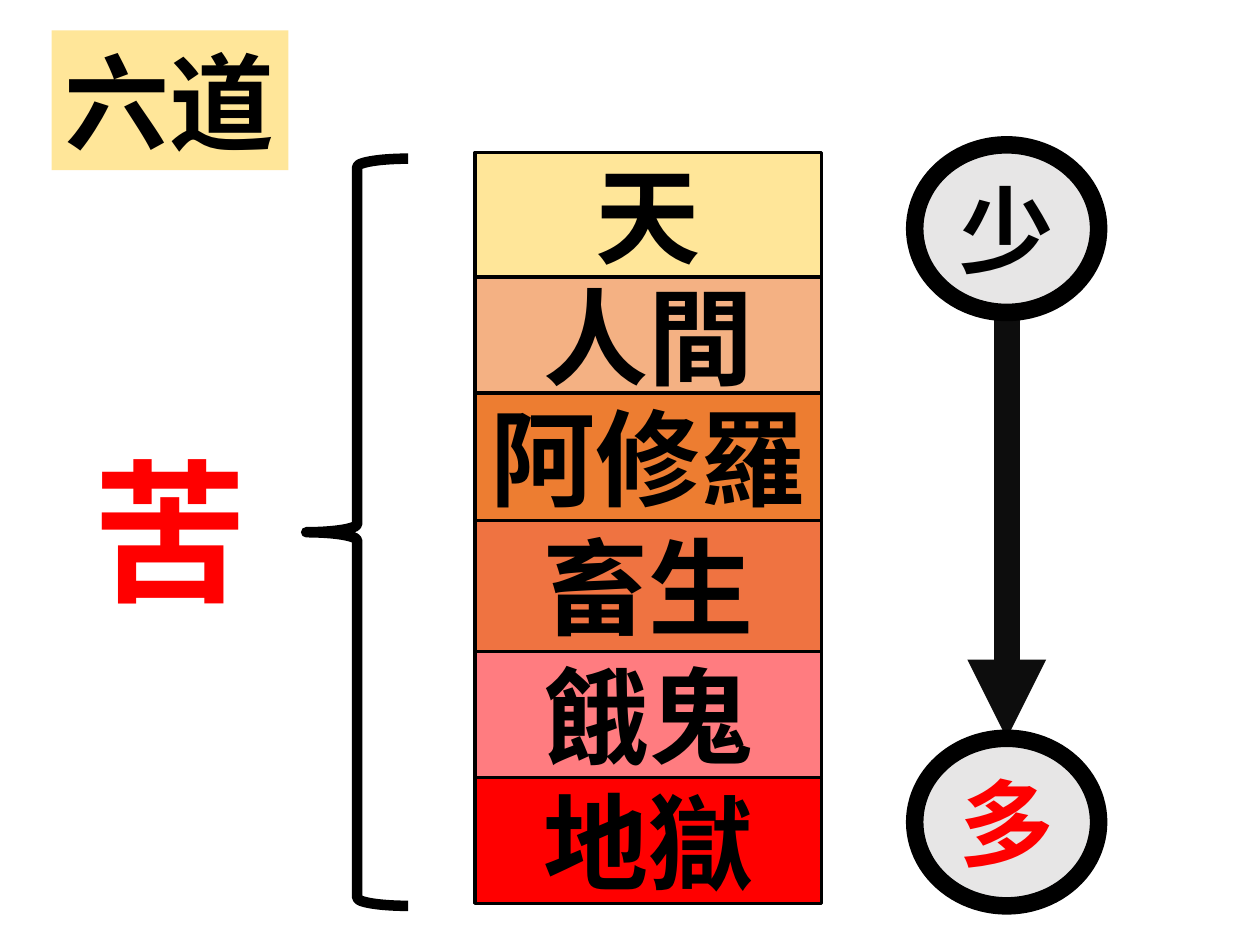
"""Draw the six realms, ranked from least to most suffering."""
from dataclasses import dataclass
from itertools import accumulate

from lxml.etree import SubElement
from pptx import Presentation
from pptx.dml.color import RGBColor
from pptx.enum.shapes import MSO_CONNECTOR, MSO_SHAPE
from pptx.enum.text import MSO_ANCHOR, MSO_AUTO_SIZE, PP_ALIGN
from pptx.oxml.ns import qn
from pptx.util import Inches, Pt

COLS, ROWS = 100, 75
WIDTH, HEIGHT = Inches(10), Inches(7.5)
FACE = "Noto Sans CJK JP"
BLACK, RED, CREAM, GREY = "000000", "FF0000", "FFE699", "E7E6E6"
FRAME = {"vertical_anchor": MSO_ANCHOR.MIDDLE, "auto_size": MSO_AUTO_SIZE.NONE}


@dataclass
class Box:
    left: float
    top: float
    width: float
    height: float

    def place(self) -> tuple[int, int, int, int]:
        return (across(self.left), down(self.top),
                across(self.width), down(self.height))


@dataclass
class Realm:
    name: str
    fill: str
    rows: float


@dataclass
class Badge:
    name: str
    ink: str
    top: float


REALMS = [
    Realm("天", CREAM, 9.9),
    Realm("人間", "F4B183", 9.2),
    Realm("阿修羅", "ED7D31", 10.1),
    Realm("畜生", "EF7341", 10.4),
    Realm("餓鬼", "FF7C80", 10),
    Realm("地獄", RED, 10),
]
BADGES = [Badge("少", BLACK, 11.5), Badge("多", RED, 58.6)]
BADGE_LEFT, BADGE_WIDTH, BADGE_HEIGHT = 72.6, 14.6, 13.3


def across(cols: float) -> int:
    return round(WIDTH * cols / COLS)


def down(rows: float) -> int:
    return round(HEIGHT * rows / ROWS)


def paint(part, tint: str) -> None:
    part.solid()
    part.fore_color.rgb = RGBColor.from_string(tint)


def stroke(line, tint: str, size: float) -> None:
    paint(line.fill, tint)
    line.width = Pt(size)


def write(shape, text: str, size: int, ink: str = BLACK,
          align=PP_ALIGN.CENTER, wrap: bool = True) -> None:
    frame = shape.text_frame
    for key, value in {**FRAME, "word_wrap": wrap}.items():
        setattr(frame, key, value)
    para = frame.paragraphs[0]
    para.alignment = align
    run = para.add_run()
    run.text = text
    for key, value in {"size": Pt(size), "bold": True, "name": FACE}.items():
        setattr(run.font, key, value)
    paint(run.font.fill, ink)
    SubElement(run.font._element, qn("a:ea"), typeface=FACE)


def draw(slide, kind, box: Box, line: float, fill: str = ""):
    shape = slide.shapes.add_shape(kind, *box.place())
    shape.shadow.inherit = False
    if fill:
        paint(shape.fill, fill)
    else:
        shape.fill.background()
    stroke(shape.line, BLACK, line)
    return shape


def head(slide) -> None:
    title = slide.shapes.title
    place = Box(4.1, 2.4, 18.8, 11.1).place()
    for key, value in zip(("left", "top", "width", "height"), place):
        setattr(title, key, value)
    paint(title.fill, CREAM)
    write(title, "六道", 60, align=PP_ALIGN.LEFT, wrap=False)


def stack(slide) -> None:
    tops = accumulate((realm.rows for realm in REALMS), initial=12.1)
    for realm, top in reversed(list(zip(REALMS, tops))):
        box = Box(37.7, top, 27.5, realm.rows)
        write(draw(slide, MSO_SHAPE.RECTANGLE, box, 2, realm.fill),
              realm.name, 60)


def scale(slide) -> None:
    first, last = BADGES
    mid = across(BADGE_LEFT + BADGE_WIDTH / 2)
    arrow = slide.shapes.add_connector(
        MSO_CONNECTOR.STRAIGHT, mid, down(first.top + BADGE_HEIGHT),
        mid, down(last.top))
    stroke(arrow.line, "0D0D0D", 15)
    SubElement(arrow.line._get_or_add_ln(), qn("a:tailEnd"), type="triangle")
    SubElement(arrow._element.spPr, qn("a:effectLst"))
    for badge in BADGES:
        box = Box(BADGE_LEFT, badge.top, BADGE_WIDTH, BADGE_HEIGHT)
        write(draw(slide, MSO_SHAPE.OVAL, box, 10, GREY),
              badge.name, 54, badge.ink)


def pain(slide) -> None:
    brace = draw(slide, MSO_SHAPE.LEFT_BRACE, Box(24.3, 12.6, 8.1, 59.3), 6)
    brace.adjustments[0], brace.adjustments[1] = 0.08, 0.5
    label = slide.shapes.add_textbox(*Box(6.4, 34.1, 14.4, 15.8).place())
    write(label, "苦", 88, RED, PP_ALIGN.LEFT, False)


def main() -> None:
    deck = Presentation()
    deck.slide_width, deck.slide_height = WIDTH, HEIGHT
    slide = deck.slides.add_slide(deck.slide_layouts[5])
    for step in (head, stack, scale, pain):
        step(slide)
    deck.save("out.pptx")


if __name__ == "__main__":
    main()
